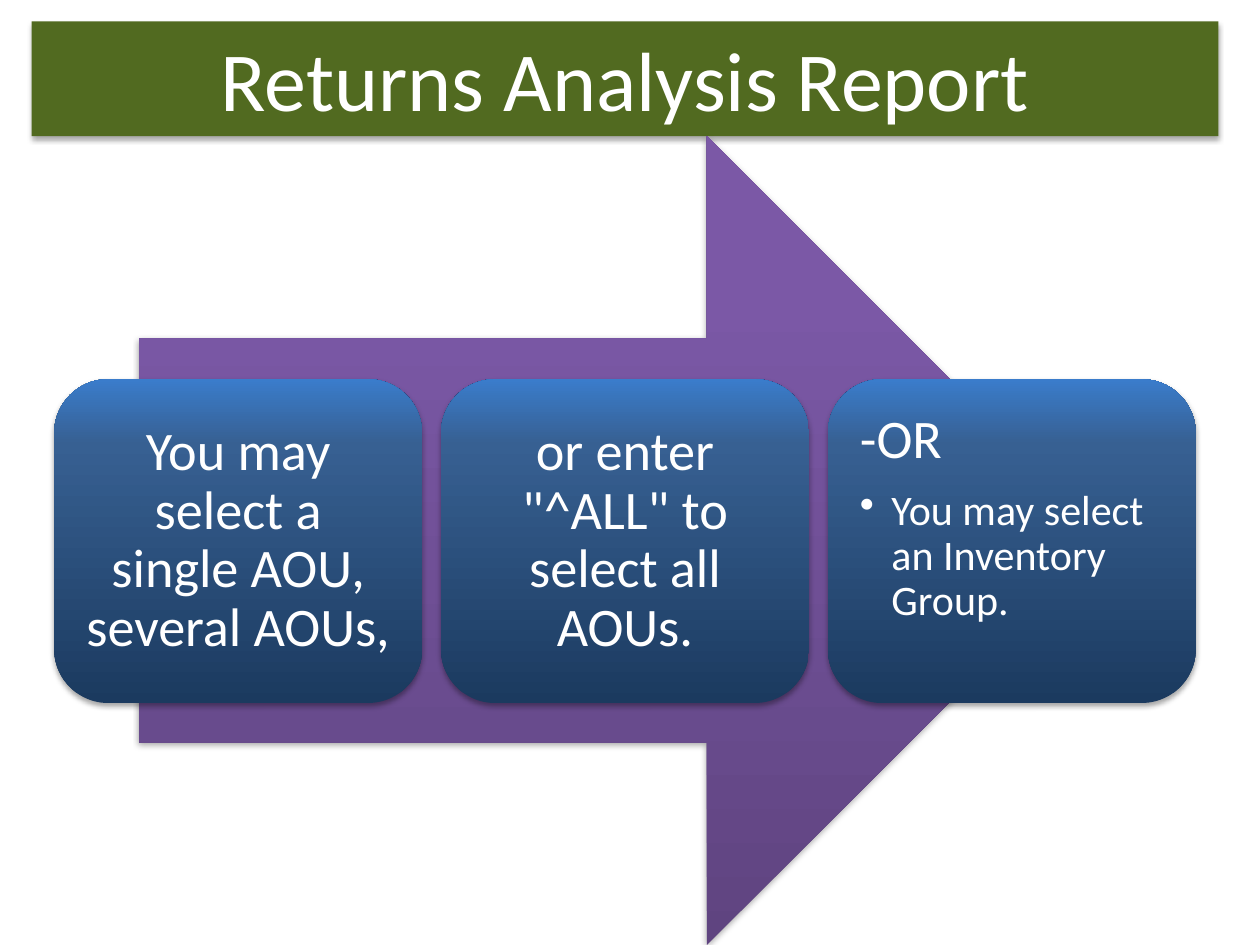
import dataclasses

import pptx
import pptx.dml.color
import pptx.enum.shapes
import pptx.enum.text
import pptx.oxml
import pptx.oxml.ns
import pptx.util

Inches = pptx.util.Inches
Pt = pptx.util.Pt
Shape = pptx.enum.shapes.MSO_SHAPE
Align = pptx.enum.text.PP_ALIGN
Anchor = pptx.enum.text.MSO_ANCHOR
NS = pptx.oxml.ns.nsdecls("a")


@dataclasses.dataclass(frozen=True)
class Theme:
    font: str = "Calibri"
    text: str = "FFFFFF"
    banner: str = "516A20"
    arrow: tuple = ("5F4480", "7B58A6", "7C57A8")
    card: tuple = ("1B3A5F", "376092", "3A7CCB")
    title_size: int = 48
    body_size: int = 31
    bullet_size: int = 24


THEME = Theme()


def add_shadow(shape):
    """Soft shadow straight below the shape."""
    shape.shadow.inherit = False
    effects = shape._element.spPr.find(pptx.oxml.ns.qn("a:effectLst"))
    effects.append(pptx.oxml.parse_xml(
        f'<a:outerShdw {NS} blurRad="{Pt(3.1)}" dist="{Pt(1.8)}" dir="5400000" rotWithShape="0">'
        '<a:srgbClr val="000000"><a:alpha val="35000"/></a:srgbClr></a:outerShdw>'))


def add_block(slide, kind, left, top, width, height, fill):
    """Shape with a plain colour, or a gradient rising from the bottom."""
    block = slide.shapes.add_shape(
        kind, Inches(left), Inches(top), Inches(width), Inches(height))
    block.line.fill.background()
    if isinstance(fill, str):
        block.fill.solid()
        block.fill.fore_color.rgb = pptx.dml.color.RGBColor.from_string(fill)
    else:
        block.fill.gradient()
        block.fill.gradient_angle = 90  # counter-clockwise, so bottom to top
        stops = block._element.spPr.find(".//" + pptx.oxml.ns.qn("a:gsLst"))
        for stop in list(stops):
            stops.remove(stop)
        for percent, colour in zip((0, 80, 100), fill):
            stops.append(pptx.oxml.parse_xml(
                f'<a:gs {NS} pos="{percent * 1000}"><a:srgbClr val="{colour}"/></a:gs>'))
    add_shadow(block)
    return block


def write(paragraph, text, size, align=Align.CENTER, line_spacing=None,
          after=None, bullet=False):
    paragraph.alignment = align
    paragraph.line_spacing = line_spacing
    if after is not None:
        paragraph.space_after = Pt(after)
    if bullet:
        paragraph.level = 1
        props = paragraph._p.get_or_add_pPr()
        props.set("marL", str(Inches(0.25)))
        props.set("indent", str(-Inches(0.25)))
        props.append(pptx.oxml.parse_xml(f'<a:buChar {NS} char="•"/>'))
    run = paragraph.add_run()
    run.text = text
    run.font.name = THEME.font
    run.font.size = Pt(size)
    run.font.color.rgb = pptx.dml.color.RGBColor.from_string(THEME.text)


def add_card(slide, left, heading, bullet=None):
    card = add_block(slide, Shape.ROUNDED_RECTANGLE, left, 3.01, 2.92, 2.57, THEME.card)
    frame = card.text_frame
    frame.word_wrap = True
    frame.margin_left = frame.margin_right = Inches(0.13)
    frame.margin_top = frame.margin_bottom = Inches(0.13)
    frame.vertical_anchor = Anchor.TOP if bullet else Anchor.MIDDLE
    write(frame.paragraphs[0], heading, THEME.body_size,
          align=Align.LEFT if bullet else Align.CENTER, line_spacing=0.9, after=10.85)
    if bullet:
        write(frame.add_paragraph(), bullet, THEME.bullet_size,
              align=Align.LEFT, line_spacing=0.9, after=3.6, bullet=True)


def main():
    deck = pptx.Presentation()
    deck.slide_width, deck.slide_height = Inches(10), Inches(7.5)
    slide = deck.slides.add_slide(deck.slide_layouts[6])

    # Title banner
    banner = add_block(slide, Shape.RECTANGLE, 0.25, 0.17, 9.42, 0.91, THEME.banner)
    banner.text_frame.word_wrap = True
    banner.text_frame.vertical_anchor = Anchor.TOP
    banner.text_frame.auto_size = pptx.enum.text.MSO_AUTO_SIZE.SHAPE_TO_FIT_TEXT
    write(banner.text_frame.paragraphs[0], "Returns Analysis Report", THEME.title_size)

    # Arrow behind the choices
    add_block(slide, Shape.RIGHT_ARROW, 1.1, 1.08, 7.72, 6.42, THEME.arrow)

    # Three choices in a row
    choices = (
        ("You may select a single AOU, several AOUs,",),
        ('or enter "^ALL" to select all AOUs.',),
        ("-OR", "You may select an Inventory Group."),
    )
    for column, choice in enumerate(choices):
        add_card(slide, 0.43 + 3.07 * column, *choice)

    deck.save("out.pptx")


if __name__ == "__main__":
    main()
